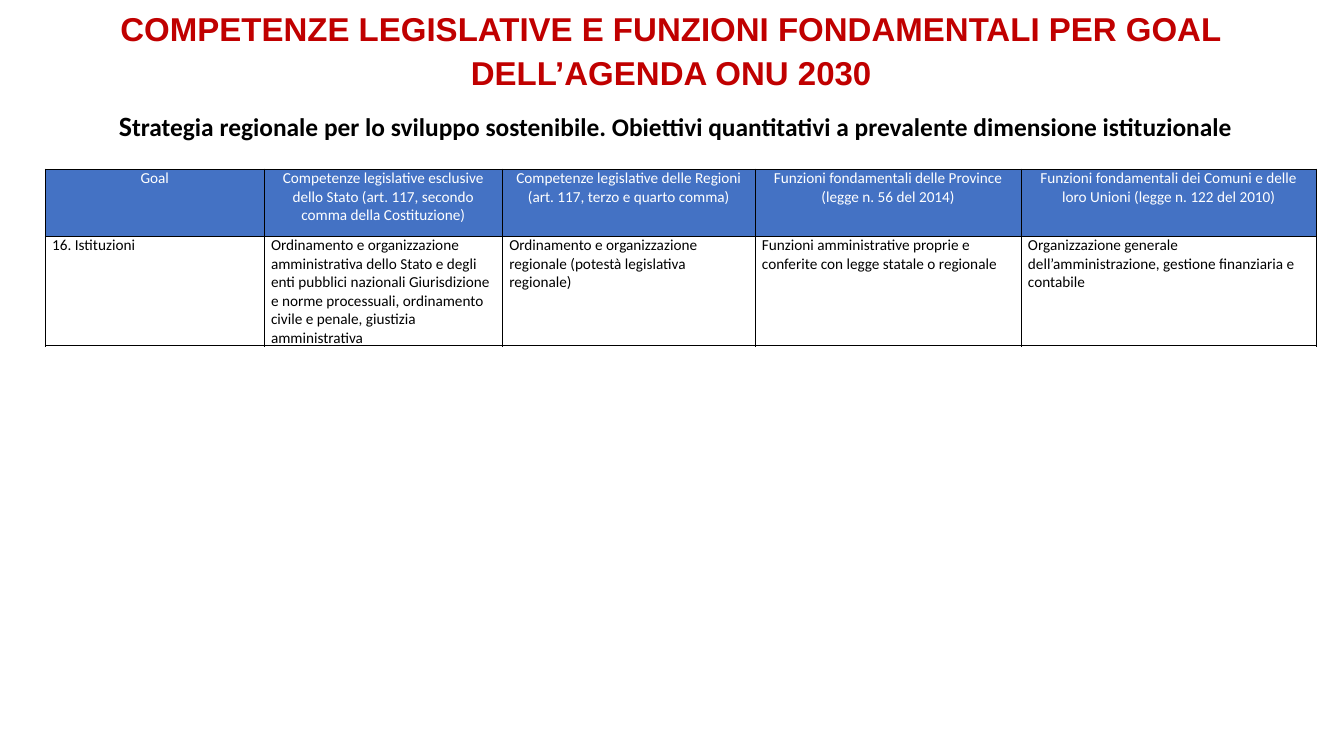
"""Build the slide on legislative powers and core functions for Goal 16."""
from lxml import etree
from pptx import Presentation
from pptx import util as u
from pptx.dml.color import RGBColor
from pptx.enum import text
from pptx.oxml import parse_xml
from pptx.oxml.ns import nsdecls

RED = RGBColor(0xC0, 0x00, 0x00)
BLACK = RGBColor(0x00, 0x00, 0x00)
WHITE = RGBColor(0xFF, 0xFF, 0xFF)
BLUE = RGBColor(0x44, 0x72, 0xC4)
CENTER, LEFT, JUSTIFY = text.PP_ALIGN.CENTER, text.PP_ALIGN.LEFT, text.PP_ALIGN.JUSTIFY


def write(frame, words, size, color=BLACK, font="Calibri", bold=False,
          align=CENTER, spacing=1.0, after=0):
    frame.word_wrap = True
    para = frame.paragraphs[0]
    para.alignment = align
    para.line_spacing = spacing
    para.space_before = u.Pt(0)
    para.space_after = u.Pt(after)
    span = para.add_run()
    span.text = words
    span.font.size = u.Pt(size)
    span.font.name = font
    span.font.bold = bold
    span.font.color.rgb = color
    return para


def add_borders(cell):
    properties = cell._tc.get_or_add_tcPr()
    for side in ("lnL", "lnR", "lnT", "lnB"):
        line = parse_xml(f'<a:{side} {nsdecls("a")} w="12192"/>')
        fill = etree.SubElement(line, f'{{{line.nsmap["a"]}}}solidFill')
        etree.SubElement(fill, f'{{{line.nsmap["a"]}}}srgbClr', val=str(BLACK))
        properties.append(line)


deck = Presentation()
deck.slide_width, deck.slide_height = u.Cm(37.34), u.Cm(21)
page = deck.slides.add_slide(deck.slide_layouts[5])

title = page.shapes.title
title.left, title.top, title.width, title.height = u.Cm(0), u.Cm(0), u.Cm(37.31), u.Cm(2.79)
title.text_frame.auto_size = text.MSO_AUTO_SIZE.NONE
title.text_frame.vertical_anchor = text.MSO_ANCHOR.TOP
write(title.text_frame,
      "COMPETENZE LEGISLATIVE E FUNZIONI FONDAMENTALI PER GOAL DELL’AGENDA ONU 2030",
      26, color=RED, font="Arial", bold=True, spacing=1.1, after=6)

subtitle = page.shapes.add_textbox(u.Cm(0.48), u.Cm(2.9), u.Cm(36.58), u.Cm(1.19))
heading = write(subtitle.text_frame, "S", 22, bold=True, after=6)
span = heading.add_run()
span.text = ("trategia regionale per lo sviluppo sostenibile. "
             "Obiettivi quantitativi a prevalente dimensione istituzionale")
span.font.size = u.Pt(20)
span.font.name = "Calibri"
span.font.bold = True
span.font.color.rgb = BLACK

rows = [
    ["Goal",
     "Competenze legislative esclusive dello Stato (art. 117, secondo comma della Costituzione)",
     "Competenze legislative delle Regioni (art. 117, terzo e quarto comma)",
     "Funzioni fondamentali delle Province (legge n. 56 del 2014)",
     "Funzioni fondamentali dei Comuni e delle loro Unioni (legge n. 122 del 2010)"],
    ["16. Istituzioni",
     "Ordinamento e organizzazione amministrativa dello Stato e degli enti pubblici nazionali "
     "Giurisdizione e norme processuali, ordinamento civile e penale, giustizia amministrativa",
     "Ordinamento e organizzazione regionale (potestà legislativa regionale)",
     "Funzioni amministrative proprie e conferite con legge statale o regionale",
     "Organizzazione generale dell’amministrazione, gestione finanziaria e contabile"],
]
widths = [6.08, 6.62, 7.02, 7.39, 8.2]
heights = [1.86, 3.05]

table = page.shapes.add_table(len(rows), len(widths), u.Cm(1.26), u.Cm(4.7),
                              u.Cm(sum(widths)), u.Cm(sum(heights))).table
table.first_row = False
table.horz_banding = False
for column, width in zip(table.columns, widths):
    column.width = u.Cm(width)
for row_index, (row, height) in enumerate(zip(rows, heights)):
    table.rows[row_index].height = u.Cm(height)
    for column_index, words in enumerate(row):
        cell = table.cell(row_index, column_index)
        cell.margin_left = cell.margin_right = u.Cm(0.19)
        cell.margin_top = cell.margin_bottom = u.Cm(0)
        add_borders(cell)
        if row_index == 0:
            cell.fill.solid()
            cell.fill.fore_color.rgb = BLUE
            write(cell.text_frame, words, 12, color=WHITE)
        else:
            cell.fill.background()
            write(cell.text_frame, words, 12, align=LEFT if column_index else JUSTIFY)

deck.save("out.pptx")
